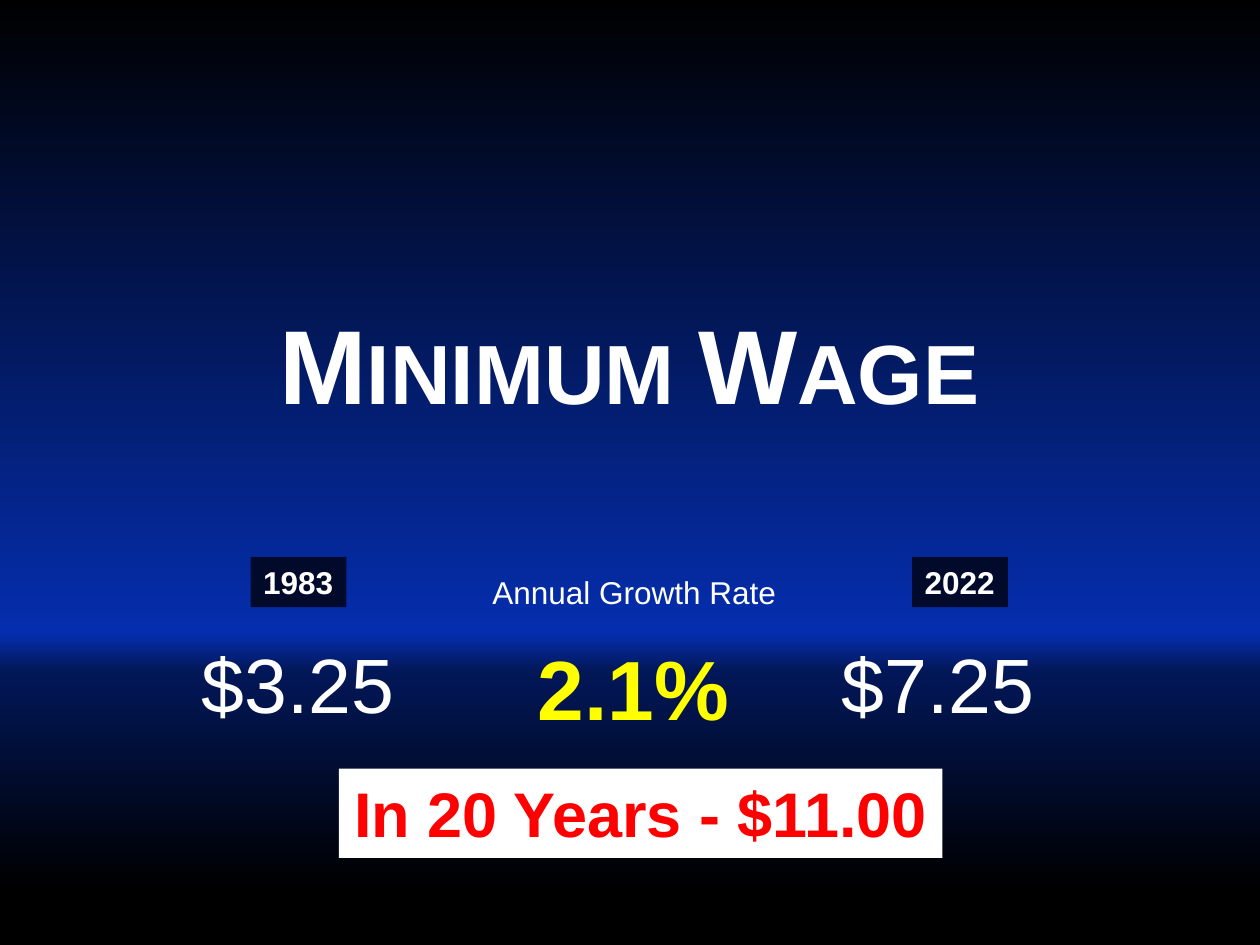
from copy import deepcopy

from pptx import Presentation, util as u
from pptx.dml.color import RGBColor
from pptx.enum import shapes, text

COLS, ROWS = 100, 75
WIDE, HIGH = u.Inches(10), u.Inches(7.5)
BLACK = RGBColor(0, 0, 0)
WHITE = RGBColor(255, 255, 255)
RED = RGBColor(255, 0, 0)
YELLOW = RGBColor(255, 255, 0)
BLUE = RGBColor(0x05, 0x2E, 0xAE)
NAVY = RGBColor(0x02, 0x17, 0x58)
INK = RGBColor(0x01, 0x0A, 0x2B)
STOPS = [(0, BLACK), (0.67, BLUE), (0.71, NAVY), (0.94, BLACK)]


def grid(col, row, cols, rows):
    x, y = WIDE / COLS, HIGH / ROWS
    return [u.Emu(round(n)) for n in (col * x, row * y, cols * x, rows * y)]


def shade(slide):
    fill = slide.background.fill
    fill.gradient()
    fill.gradient_angle = 270
    stops = fill._fill._gradFill.gsLst
    for _ in range(len(STOPS) - len(stops)):
        stops.append(deepcopy(stops[0]))
    for stop, (place, tint) in zip(fill.gradient_stops, STOPS):
        stop.position = place
        stop.color.rgb = tint


def write(shape, runs, color=WHITE, bold=False, align=text.PP_ALIGN.LEFT):
    frame = shape.text_frame
    frame.word_wrap = False
    frame.auto_size = text.MSO_AUTO_SIZE.SHAPE_TO_FIT_TEXT
    frame.vertical_anchor = text.MSO_ANCHOR.TOP
    para = frame.paragraphs[0]
    para.alignment = align
    for words, size in runs:
        run = para.add_run()
        run.text = words
        font = run.font
        font.name, font.size, font.bold = "Arial", u.Pt(size), bold
        font.color.rgb = color


def label(slide, cell, runs, **style):
    write(slide.shapes.add_textbox(*grid(*cell)), runs, **style)


def panel(slide, cell, fill, runs, **style):
    box = slide.shapes.add_shape(shapes.MSO_SHAPE.RECTANGLE, *grid(*cell))
    box.shadow.inherit = False
    box.fill.solid()
    box.fill.fore_color.rgb = fill
    box.line.fill.background()
    write(box, runs, bold=True, **style)


def main():
    deck = Presentation()
    deck.slide_width, deck.slide_height = WIDE, HIGH
    slide = deck.slides.add_slide(deck.slide_layouts[6])
    shade(slide)

    mid = text.PP_ALIGN.CENTER
    wages = [("1983", 19.9, "$3.25", 15), ("2022", 72.4, "$7.25", 65.8)]
    for year, left, wage, start in wages:
        label(slide, (start, 50, 17.5, 8.4), [(wage, 44)])
        panel(slide, (left, 44.2, 7.6, 4), INK, [(year, 18)])

    label(slide, (41.7, 50, 17.4, 9.1), [("2.1%", 48)], color=YELLOW, bold=True)
    label(slide, (38.1, 45, 24.7, 4), [("Annual Growth Rate", 18)])
    title = [("M", 60), ("INIMUM ", 48), ("W", 60), ("AGE", 48)]
    label(slide, (20.9, 23.3, 58.1, 11.1), title, bold=True, align=mid)
    panel(slide, (26.9, 61, 47.9, 7.1), WHITE,
          [("In 20 Years - $11.00", 36)], color=RED, align=mid)
    deck.save("out.pptx")


if __name__ == "__main__":
    main()
